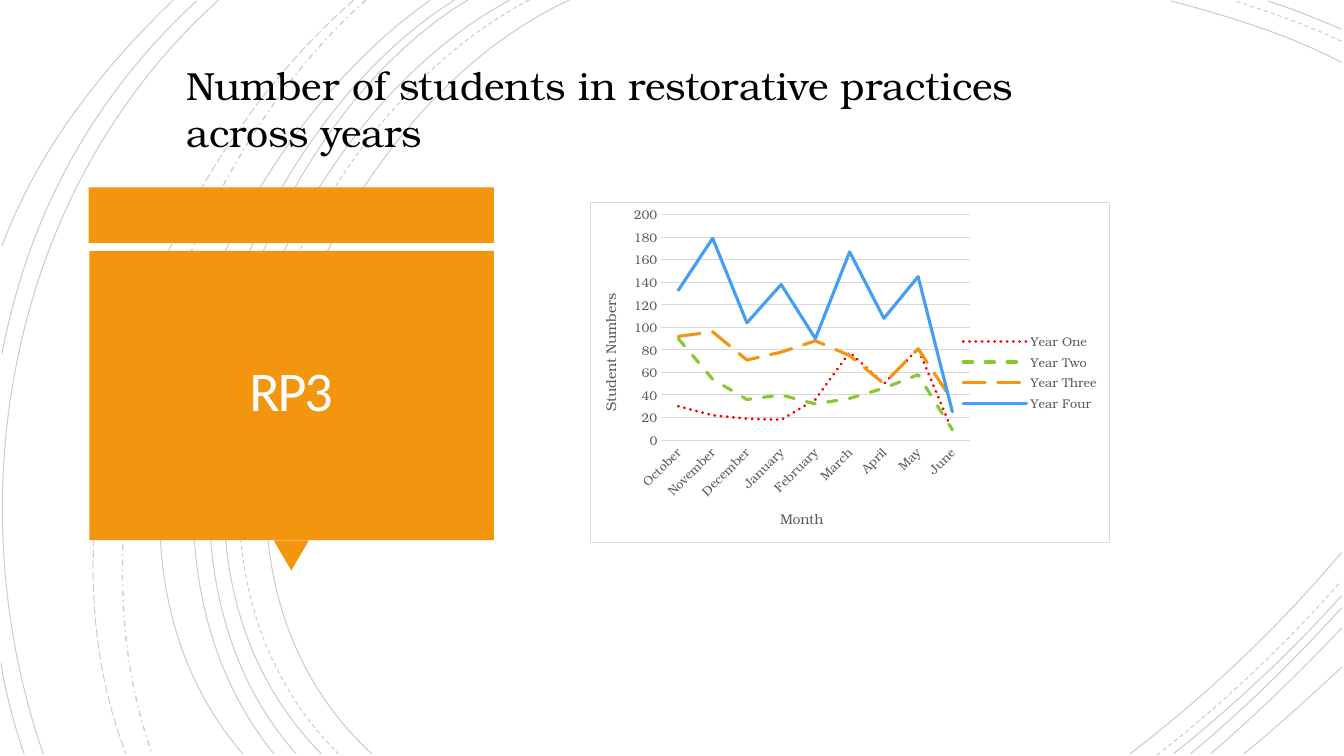
from dataclasses import dataclass

from lxml.etree import SubElement
from pptx import Presentation
from pptx.chart.data import CategoryChartData
from pptx.dml.color import RGBColor
from pptx.enum.chart import XL_CHART_TYPE as ChartType, XL_LEGEND_POSITION as LegendSide
from pptx.enum.chart import XL_TICK_MARK as TickMark
from pptx.enum.dml import MSO_LINE_DASH_STYLE as Dash
from pptx.enum.shapes import MSO_SHAPE as Preset
from pptx.enum.text import MSO_ANCHOR as Anchor, MSO_AUTO_SIZE as AutoSize, PP_ALIGN as Align
from pptx.oxml import parse_xml
from pptx.oxml.ns import nsdecls, qn
from pptx.util import Pt


@dataclass(frozen=True)
class Theme:
    """Colours, fonts and type sizes of the slide."""
    ink: str = "000000"
    paper: str = "FFFFFF"
    label: str = "FFFEFF"
    accent: str = "F3960F"
    muted: str = "595959"
    rule: str = "D9D9D9"
    red: str = "FF0000"
    green: str = "88C933"
    blue: str = "449EF3"
    serif: str = "TeX Gyre Bonum"
    sans: str = "Calibri"
    label_size: int = 40
    heading_size: int = 28
    axis_title_size: int = 10
    tick_size: int = 9
    hairline: float = 0.75
    series_line: float = 2.25


THEME = Theme()
UNIT = 72
AUTO_TURN = -1000

SWIRLS = {
    (Dash.SOLID, 0.75): [
        [(5.65, 0), (3.15, 1.15), (1.43, 5.4), (3.69, 7.48)],
        [(5.06, 0), (2.7, 1.27), (1.1, 5.37), (3.19, 7.48)],
        [(4.64, 0), (2.44, 1.33), (1.1, 5.41), (2.94, 7.48)],
        [(4.51, 0), (2.31, 1.38), (0.97, 5.33), (2.72, 7.48)],
        [(4.27, 0), (2.17, 1.47), (0.53, 5.29), (2.41, 7.48)],
        [(2.17, 0), (0.11, 1.85), (-0.46, 4.9), (0.43, 7.48)],
        [(1.95, 0.01), (0.92, 0.96), (0.28, 2.14), (0.02, 3.51)],
        [(0.01, 6.58), (0.06, 6.89), (0.14, 7.19), (0.24, 7.48)],
        [(1.72, 0), (1, 0.69), (0.37, 1.5), (0.02, 2.44)],
        [(13.31, 0.62), (12.78, 0.34), (12.18, 0.16), (11.62, 0.01)],
        [(13.31, 0.29), (13.07, 0.19), (12.83, 0.09), (12.58, 0.01)],
        [(11.21, 7.48), (11.97, 6.9), (12.69, 6.22), (13.31, 5.48)],
        [(11.64, 7.48), (12.23, 7.01), (12.8, 6.48), (13.31, 5.91)],
        [(11.81, 7.48), (12.34, 7.04), (12.84, 6.55), (13.31, 6.03)],
        [(12.01, 7.48), (12.46, 7.09), (12.9, 6.67), (13.31, 6.23)],
        [(12.34, 7.48), (12.67, 7.21), (12.99, 6.92), (13.31, 6.62)],
    ],
    (Dash.DASH, 0.75): [
        [(5.25, 0), (2.85, 1.25), (1.23, 5.37), (3.36, 7.48)],
        [(13.31, 0.41), (12.97, 0.25), (12.6, 0.12), (12.25, 0.01)],
        [(11.48, 7.49), (12.13, 6.98), (12.75, 6.4), (13.3, 5.77)],
    ],
    (Dash.DASH_DOT, 1): [[(3.63, 0), (1.76, 1.66), (0.65, 5.09), (1.51, 7.48)]],
    (Dash.LONG_DASH, 0.75): [[(3.51, 0), (1.57, 1.69), (0.29, 4.99), (1.25, 7.48)]],
}

MONTHS = ["October", "November", "December", "January", "February", "March", "April", "May", "June"]
YEARS = [
    ("Year One", THEME.red, Dash.ROUND_DOT, [30, 22, 19, 18, 36, 78, 50, 81, 8]),
    ("Year Two", THEME.green, Dash.DASH, [90, 54, 36, 40, 32, 37, 46, 58, 9]),
    ("Year Three", THEME.accent, Dash.LONG_DASH, [92, 96, 71, 78, 88, 75, 50, 81, 35]),
    ("Year Four", THEME.blue, Dash.SOLID, [133, 179, 104, 138, 90, 167, 108, 145, 25]),
]


def style_font(font, size, color, face):
    """Set size, colour and face of a font."""
    font.size, font.name, font.bold = Pt(size), face, False
    font.color.rgb = RGBColor.from_string(color)


def style_line(line, color, width, dash=Dash.SOLID):
    """Set colour, width and dash of a line."""
    line.color.rgb = RGBColor.from_string(color)
    line.width, line.dash_style = Pt(width), dash


def write_text(frame, text, size, color, face, align=None, leading=None, tracking=None):
    """Write one formatted paragraph into a text frame."""
    para = frame.paragraphs[0]
    if align is not None:
        para.alignment = align
    if leading is not None:
        para.line_spacing = leading
    span = para.add_run()
    span.text = text
    style_font(span.font, size, color, face)
    if tracking is not None:
        span.font._element.set("spc", str(int(tracking * 100)))


def add_frame(page, box, inset):
    """Add a wrapping text box and return its frame."""
    frame = page.shapes.add_textbox(*map(Pt, box)).text_frame
    frame.word_wrap = True
    frame.margin_left = frame.margin_right = Pt(inset[0])
    frame.margin_top = frame.margin_bottom = Pt(inset[1])
    return frame


def add_curve(page, corners):
    """Add an open cubic curve through its four control points."""
    start, *others = [(Pt(x), Pt(y)) for x, y in corners]
    builder = page.shapes.build_freeform(*start)
    builder.add_line_segments(others, close=False)
    curve = builder.convert_to_shape()
    legs = list(curve._element.iter(qn("a:lnTo")))
    bend = SubElement(legs[0].getparent(), qn("a:cubicBezTo"))
    for leg in legs:
        bend.append(leg[0])
        leg.getparent().remove(leg)
    return curve


def draw_swirls(page, box):
    """Draw the faint background curves."""
    left, top = box[:2]
    for (dash, width), curves in SWIRLS.items():
        for corners in curves:
            swirl = add_curve(page, [(left + x * UNIT, top + y * UNIT) for x, y in corners])
            swirl.shadow.inherit = False
            swirl.fill.background()
            style_line(swirl.line, THEME.ink, width, dash)
            tint = swirl.line.fill._xPr.find(qn("a:solidFill"))[0]
            SubElement(tint, qn("a:alpha")).set("val", "20000")


def draw_callout(page, box, label):
    """Draw the banner, the pointed block below it and its label."""
    left, top, width, height = box
    band, gap, tip_width, tip_height = 39.6, 5.76, 25.2, 21.6
    block_top = top + band + gap
    block_height = height - band - gap - tip_height
    parts = [
        (Preset.RECTANGLE, (left, top, width, band), 0),
        (Preset.ISOSCELES_TRIANGLE,
         (left + (width - tip_width) / 2, top + height - tip_height, tip_width, tip_height), 180),
        (Preset.RECTANGLE, (left + 0.4, block_top, width - 0.4, block_height), 0),
    ]
    for preset, place, turn in parts:
        part = page.shapes.add_shape(preset, *map(Pt, place))
        part.rotation = turn
        part.shadow.inherit = False
        part.fill.solid()
        part.fill.fore_color.rgb = RGBColor.from_string(THEME.accent)
        part.line.fill.background()
    frame = add_frame(page, (left + 6.5, block_top + 5.76, width - 13.5, block_height - 13), (18, 18))
    frame.vertical_anchor = Anchor.MIDDLE
    write_text(frame, label, size=THEME.label_size, color=THEME.label, face=THEME.sans,
               align=Align.CENTER, leading=0.85, tracking=-1.5)


def draw_heading(page, box, text):
    """Draw the heading above the chart."""
    frame = add_frame(page, box, (7.2, 3.6))
    frame.auto_size = AutoSize.SHAPE_TO_FIT_TEXT
    write_text(frame, text, size=THEME.heading_size, color=THEME.ink, face=THEME.serif)


def style_axis(axis, title, title_turn):
    """Format an axis with its title and labels."""
    axis.major_tick_mark = axis.minor_tick_mark = TickMark.NONE
    style_font(axis.tick_labels.font, THEME.tick_size, THEME.muted, THEME.serif)
    frame = axis.axis_title.text_frame
    write_text(frame, title, size=THEME.axis_title_size, color=THEME.muted, face=THEME.serif)
    labels = axis._element.find(qn("c:txPr"))
    for body, turn in ((labels, AUTO_TURN), (frame._txBody, title_turn)):
        body.find(qn("a:bodyPr")).set("rot", str(turn * 60000))


def frame_chart(chart):
    """Fix the plot area and give the chart its fill and border."""
    places = zip("xywh", (0.137, 0.037, 0.594, 0.662))
    sizes = "".join(f'<c:{key} val="{value}"/>' for key, value in places)
    layout = parse_xml(
        f'<c:layout {nsdecls("c")}><c:manualLayout><c:layoutTarget val="inner"/>'
        f'<c:xMode val="edge"/><c:yMode val="edge"/>{sizes}</c:manualLayout></c:layout>')
    body = chart._chartSpace.find(qn("c:chart"))
    plot_area = body.find(qn("c:plotArea"))
    for spare in plot_area.findall(qn("c:layout")):
        plot_area.remove(spare)
    plot_area.insert(0, layout)
    body.addnext(parse_xml(
        f'<c:spPr {nsdecls("c", "a")}><a:solidFill><a:srgbClr val="{THEME.paper}"/></a:solidFill>'
        f'<a:ln w="{Pt(THEME.hairline)}"><a:solidFill><a:srgbClr val="{THEME.rule}"/></a:solidFill></a:ln>'
        '</c:spPr>'))


def draw_chart(page, box):
    """Draw the line chart of student numbers by month."""
    data = CategoryChartData()
    data.categories = MONTHS
    for name, _, _, values in YEARS:
        data.add_series(name, values)
    chart = page.shapes.add_chart(ChartType.LINE, *map(Pt, box), data).chart
    chart.has_title = False
    style_font(chart.font, THEME.axis_title_size, THEME.ink, THEME.serif)
    chart.plots[0].vary_by_categories = False
    for series, (_, color, dash, _) in zip(chart.plots[0].series, YEARS):
        series.smooth = False
        style_line(series.format.line, color, THEME.series_line, dash)
        series._element.find(qn("c:spPr")).find(qn("a:ln")).set("cap", "rnd")
    months, numbers = chart.category_axis, chart.value_axis
    style_axis(months, "Month", 0)
    style_axis(numbers, "Student Numbers", -90)
    style_line(months.format.line, THEME.rule, THEME.hairline)
    numbers.format.line.fill.background()
    style_line(numbers.major_gridlines.format.line, THEME.rule, THEME.hairline)
    chart.has_legend = True
    chart.legend.position = LegendSide.RIGHT
    chart.legend.include_in_layout = False
    style_font(chart.legend.font, THEME.tick_size, THEME.muted, THEME.serif)
    frame_chart(chart)


def main():
    """Build the deck and save it."""
    deck = Presentation()
    deck.slide_width, deck.slide_height = Pt(960), Pt(540)
    page = deck.slides.add_slide(deck.slide_layouts[6])
    draw_swirls(page, (0, 0, 960, 540))
    draw_callout(page, (63.36, 133.92, 289.4, 273.6), "RP3")
    draw_chart(page, (421.2, 144, 371.5, 244))
    draw_heading(page, (126, 40.32, 694.8, 41), "Number of students in restorative practices across years")
    deck.save("out.pptx")


if __name__ == "__main__":
    main()
